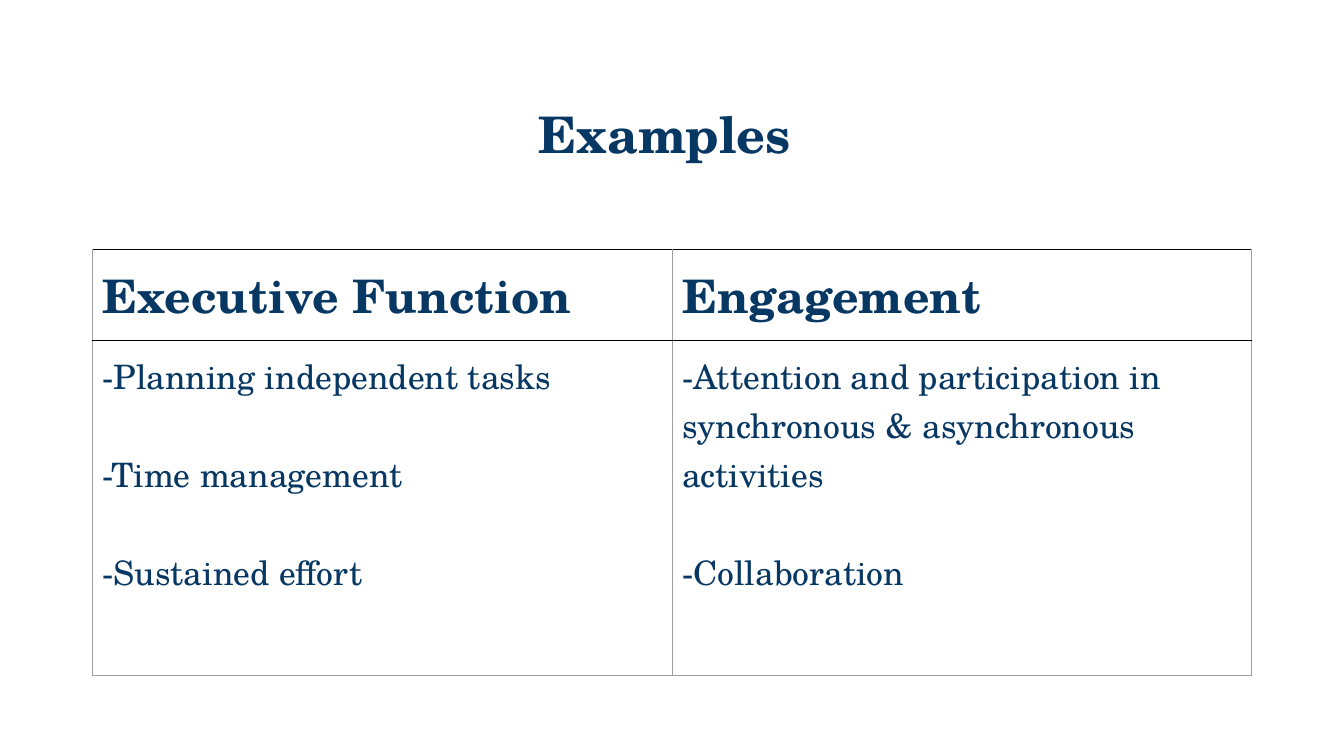
from lxml.etree import SubElement
from pptx import Presentation
from pptx.dml.color import RGBColor
from pptx.enum.text import MSO_ANCHOR, PP_ALIGN
from pptx.oxml.ns import qn
from pptx.util import Pt

NAVY = RGBColor(0x07, 0x37, 0x63)
BLACK = RGBColor(0x00, 0x00, 0x00)
GREY = RGBColor(0x9E, 0x9E, 0x9E)

THIN = (GREY, 0.75)
RULE = (BLACK, 1)
SPACER_BORDERS = {"B": RULE}
HEADING_BORDERS = {"L": THIN, "R": THIN, "T": RULE, "B": RULE}
EXAMPLE_BORDERS = {"L": THIN, "R": THIN, "T": RULE, "B": THIN}

COLUMNS = {
    "Executive Function": [
        "-Planning independent tasks",
        "-Time management",
        "-Sustained effort",
    ],
    "Engagement": [
        "-Attention and participation in synchronous & asynchronous activities",
        "-Collaboration",
    ],
}


class SlideBuilder:
    font_name = "TeX Gyre Schola"
    color = NAVY
    inset = Pt(7.2)

    def __init__(self, slide):
        self.slide = slide

    def style(self, paragraph, size, bold):
        for run in paragraph.runs:
            run.font.name = self.font_name
            run.font.size = Pt(size)
            run.font.bold = bold
            run.font.color.rgb = self.color

    def title(self, text, left, top, width, height):
        heading = self.slide.shapes.title
        heading.left, heading.top = Pt(left), Pt(top)
        heading.width, heading.height = Pt(width), Pt(height)
        frame = heading.text_frame
        frame.text = text
        frame.vertical_anchor = MSO_ANCHOR.MIDDLE
        paragraph = frame.paragraphs[0]
        paragraph.alignment = PP_ALIGN.CENTER
        paragraph.line_spacing = 0.9
        self.style(paragraph, 36, True)

    def table(self, left, top, column_widths, row_heights):
        grid = self.slide.shapes.add_table(
            len(row_heights), len(column_widths), Pt(left), Pt(top),
            Pt(sum(column_widths)), Pt(sum(row_heights))).table
        grid.first_row = grid.horz_banding = False
        for column, width in zip(grid.columns, column_widths):
            column.width = Pt(width)
        for row, height in zip(grid.rows, row_heights):
            row.height = Pt(height)
        return grid

    def cell(self, cell, lines, borders, size=18, bold=False, gap=0):
        cell.margin_left = cell.margin_right = self.inset
        cell.margin_top = cell.margin_bottom = self.inset
        cell.text_frame.text = "\n".join(lines)
        for index, paragraph in enumerate(cell.text_frame.paragraphs):
            if index:
                paragraph.space_before = Pt(gap)
            self.style(paragraph, size, bold)
        properties = cell._tc.get_or_add_tcPr()
        for side in "LRTB":
            line = SubElement(properties, qn(f"a:ln{side}"))
            if side in borders:
                color, width = borders[side]
                line.set("w", str(Pt(width)))
                fill = SubElement(line, qn("a:solidFill"))
                SubElement(fill, qn("a:srgbClr")).set("val", str(color))
            else:
                SubElement(line, qn("a:noFill"))
        cell.fill.background()


def main():
    deck = Presentation()
    deck.slide_width, deck.slide_height = Pt(960), Pt(540)
    builder = SlideBuilder(deck.slides.add_slide(deck.slide_layouts[5]))
    builder.title("Examples ", 66, 46, 828, 104.5)
    examples = builder.table(66, 113, [414, 414], [65, 65.5, 239])
    for column, (heading, items) in enumerate(COLUMNS.items()):
        builder.cell(examples.cell(0, column), [], SPACER_BORDERS)
        builder.cell(examples.cell(1, column), [heading], HEADING_BORDERS, 33, True)
        builder.cell(examples.cell(2, column), items, EXAMPLE_BORDERS, 24, gap=35)
    deck.save("out.pptx")


if __name__ == "__main__":
    main()
